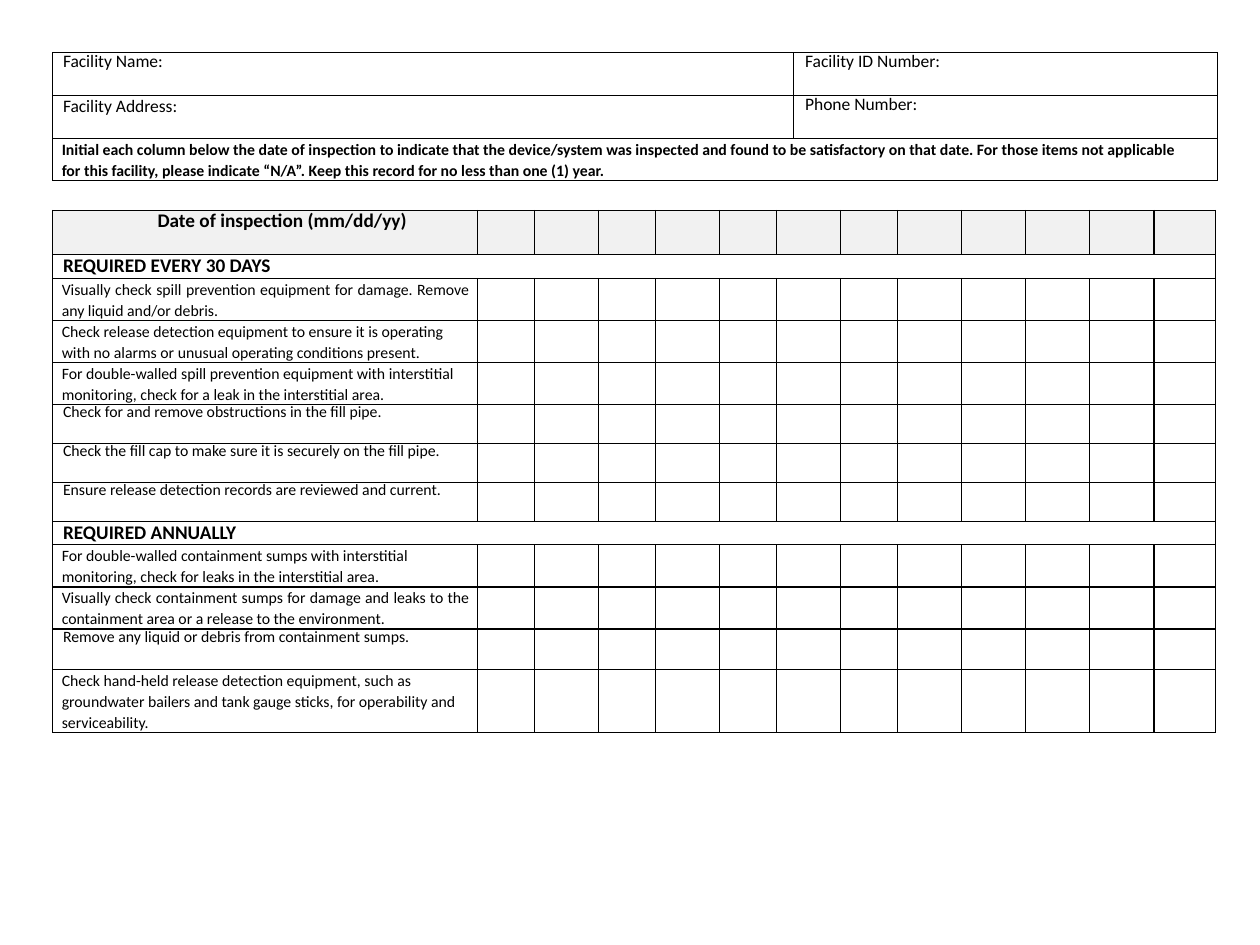
import pptx
import pptx.util
import pptx.dml.color
import pptx.enum.text
import lxml.etree
from pptx.oxml.ns import qn

In = pptx.util.Inches
Pt = pptx.util.Pt
ALIGN = pptx.enum.text.PP_ALIGN
ANCHOR = pptx.enum.text.MSO_ANCHOR

# Text formats: font values, line height in points, indents in inches
BASE = {"font": {"name": "Calibri", "size": Pt(9), "bold": False},
        "line": 12, "left": 0.07, "right": 0.07,
        "align": ALIGN.LEFT, "anchor": ANCHOR.TOP}


def style(size=9, bold=False, **more):
    font = {"name": "Calibri", "size": Pt(size), "bold": bold}
    return {**BASE, "font": font, **more}


FIELD = style(10, line=11, left=0.08)
SIDE = style(10, line=11, left=0.09)
PLACE = style(10, line=12, left=0.08)
RULE = style(9, True, right=0.2)
HEAD = style(11, True, line=13, left=0.83)
PART = style(11, True, line=13, left=0.08, anchor=ANCHOR.MIDDLE)
LONG = style()
EVEN = style(align=ALIGN.JUSTIFY)
SHORT = style(line=10, left=0.08)


def color(code):
    return pptx.dml.color.RGBColor.from_string(code)


class Form:
    ink = "000000"
    shade = "F1F1F1"
    edge = 0.7

    def __init__(self, deck):
        self.slide = deck.slides.add_slide(deck.slide_layouts[6])

    def grid(self, left, top, cols, rows):
        frame = self.slide.shapes.add_table(
            len(rows), len(cols), In(left), In(top), In(sum(cols)), In(sum(rows)))
        table = frame.table
        table.first_row = table.horz_banding = False
        for col, width in zip(table.columns, cols):
            col.width = In(width)
        for row, height in zip(table.rows, rows):
            row.height = In(height)
        for cell in table.iter_cells():
            self.box(cell)
        return table

    def box(self, cell):
        for side in ("left", "right", "top", "bottom"):
            setattr(cell, "margin_" + side, 0)
        # Cell borders
        prop = cell._tc.get_or_add_tcPr()
        for tag in ("a:lnL", "a:lnR", "a:lnT", "a:lnB"):
            line = lxml.etree.SubElement(prop, qn(tag), w=str(Pt(self.edge)))
            fill = lxml.etree.SubElement(line, qn("a:solidFill"))
            lxml.etree.SubElement(fill, qn("a:srgbClr"), val=self.ink)
        cell.fill.background()

    def tint(self, cell):
        cell.fill.solid()
        cell.fill.fore_color.rgb = color(self.shade)

    def text(self, cell, words, form):
        cell.vertical_anchor = form["anchor"]
        para = cell.text_frame.paragraphs[0]
        para.alignment = form["align"]
        para.line_spacing = Pt(form["line"])
        prop = para._p.get_or_add_pPr()
        for key, size in (("marL", form["left"]), ("marR", form["right"]), ("indent", 0)):
            prop.set(key, str(In(size)))
        run = para.add_run()
        run.text = words
        for key, value in form["font"].items():
            setattr(run.font, key, value)
        run.font.color.rgb = color(self.ink)

    def span(self, table, row):
        last = len(table.columns) - 1
        table.cell(row, 0).merge(table.cell(row, last))


# Row height, format and wording of the checklist
CHECKS = [
    (0.35, HEAD, "Date of inspection (mm/dd/yy)"),
    (0.19, PART, "REQUIRED EVERY 30 DAYS"),
    (0.31, EVEN, "Visually check spill prevention equipment for damage. "
                 "Remove any liquid and/or debris."),
    (0.31, LONG, "Check release detection equipment to ensure it is operating "
                 "with no alarms or unusual operating conditions present."),
    (0.31, LONG, "For double-walled spill prevention equipment with interstitial "
                 "monitoring, check for a leak in the interstitial area."),
    (0.31, SHORT, "Check for and remove obstructions in the fill pipe."),
    (0.3, SHORT, "Check the fill cap to make sure it is securely on the fill pipe."),
    (0.31, SHORT, "Ensure release detection records are reviewed and current."),
    (0.19, PART, "REQUIRED ANNUALLY"),
    (0.31, LONG, "For double-walled containment sumps with interstitial "
                 "monitoring, check for leaks in the interstitial area."),
    (0.31, EVEN, "Visually check containment sumps for damage and leaks to the "
                 "containment area or a release to the environment."),
    (0.32, SHORT, "Remove any liquid or debris from containment sumps."),
    (0.46, LONG, "Check hand-held release detection equipment, such as "
                 "groundwater bailers and tank gauge sticks, for operability "
                 "and serviceability."),
]


def main():
    deck = pptx.Presentation()
    deck.slide_width, deck.slide_height = In(10), In(7.5)
    form = Form(deck)

    # Facility details
    site = form.grid(0.42, 0.42, [5.88, 3.36], [0.34, 0.34, 0.31])
    form.span(site, 2)
    for row, col, kind, words in (
            (0, 0, FIELD, "Facility Name:"),
            (0, 1, SIDE, "Facility ID Number:"),
            (1, 0, PLACE, "Facility Address:"),
            (1, 1, SIDE, "Phone Number:"),
            (2, 0, RULE, "Initial each column below the date of inspection to "
                         "indicate that the device/system was inspected and found "
                         "to be satisfactory on that date. For those items not "
                         "applicable for this facility, please indicate “N/A”. "
                         "Keep this record for no less than one (1) year.")):
        form.text(site.cell(row, col), words, kind)

    # Inspection checklist
    dates = [0.45, 0.51] * 4 + [0.51] * 3 + [0.49]
    checks = form.grid(0.42, 1.67, [3.37] + dates, [item[0] for item in CHECKS])
    for row, (_, kind, words) in enumerate(CHECKS):
        if kind is PART:
            form.span(checks, row)
        form.text(checks.cell(row, 0), words, kind)
    for cell in checks.rows[0].cells:
        form.tint(cell)

    deck.save("out.pptx")


if __name__ == "__main__":
    main()
